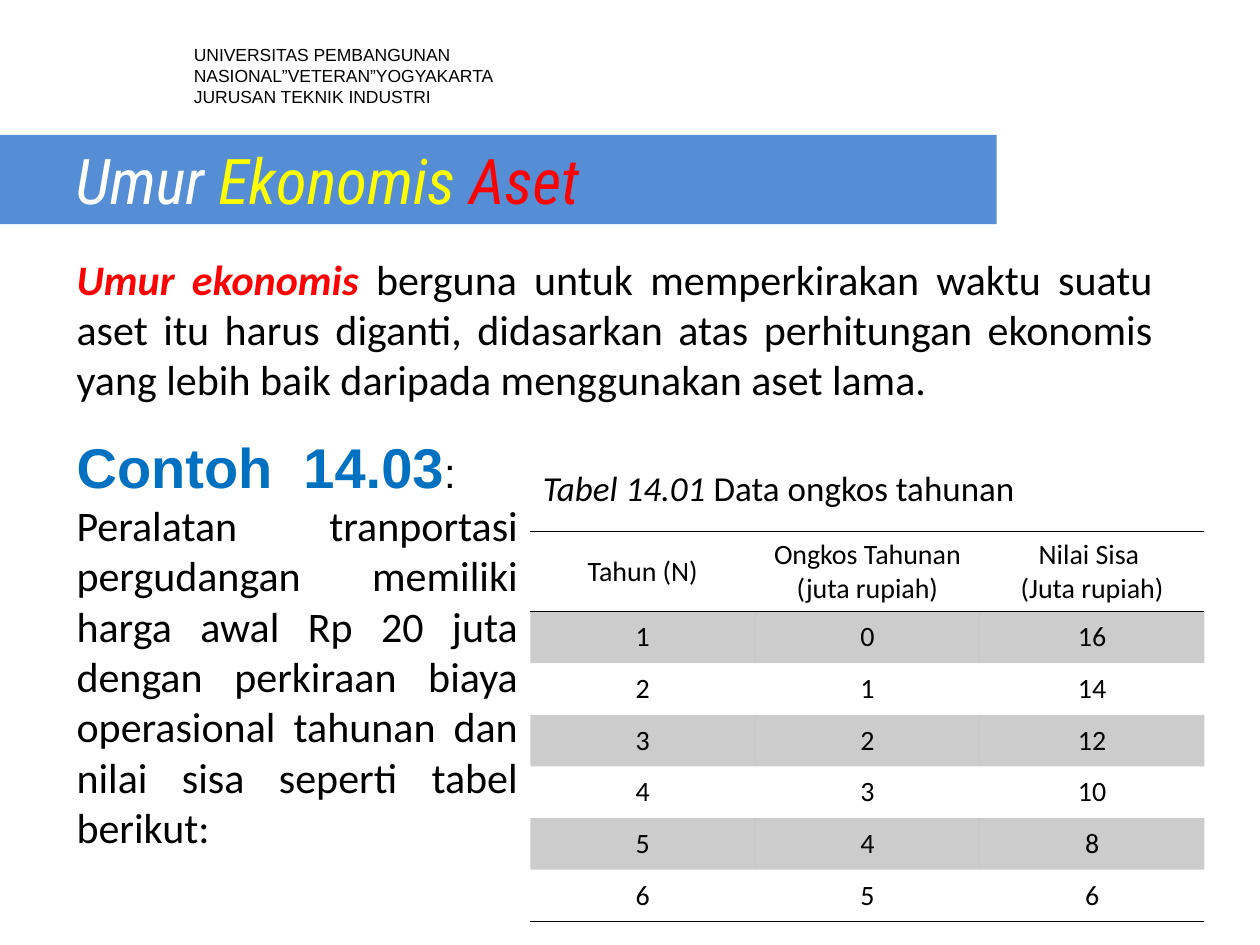
from lxml import etree
from pptx import Presentation
from pptx.dml.color import RGBColor
from pptx.enum.text import MSO_ANCHOR, MSO_AUTO_SIZE, PP_ALIGN
from pptx.oxml.ns import qn
from pptx.util import Inches, Pt

LEFT, CENTER, JUSTIFY = PP_ALIGN.LEFT, PP_ALIGN.CENTER, PP_ALIGN.JUSTIFY
MIDDLE = MSO_ANCHOR.MIDDLE
NO_AUTOFIT = MSO_AUTO_SIZE.NONE
NO_STYLE = "{2D5ABB26-0587-4C30-8999-92F81FD0307C}"
BLACK, RED = "000000", "FF0000"


def color(value):
    return RGBColor.from_string(value)


def add_runs(para, align, *runs):
    """Each run is (text, font, size, colour, bold, italic)."""
    para.alignment = align
    for text, name, size, value, bold, italic in runs:
        run = para.add_run()
        run.text = text
        run.font.name, run.font.size = name, Pt(size)
        run.font.bold, run.font.italic = bold, italic
        run.font.color.rgb = color(value)


deck = Presentation()
deck.slide_width, deck.slide_height = Inches(10), Inches(7.5)
slide = deck.slides.add_slide(deck.slide_layouts[5])

# Title band
title = slide.shapes.title
title.left, title.top = Inches(0), Inches(1.07)
title.width, title.height = Inches(7.91), Inches(0.71)
title.fill.solid()
title.fill.fore_color.rgb = color("558ED5")
frame = title.text_frame
frame.auto_size = NO_AUTOFIT
frame.vertical_anchor = MIDDLE
frame.margin_left = Inches(0.6)
add_runs(frame.paragraphs[0], LEFT,
         *[(word, "Roboto Condensed", 36, value, False, True) for word, value in
           [("Umur ", "FFFFFF"), ("Ekonomis ", "FFFF00"), ("Aset", RED)]])

# Text boxes: place, then paragraphs as (alignment, runs)
boxes = [
    # University header
    ((1.44, 0.3, 3.59, 0.6), [
        (LEFT, [("UNIVERSITAS PEMBANGUNAN NASIONAL”VETERAN”YOGYAKARTA",
                 "Arial", 10, BLACK, False, False)]),
        (LEFT, [("JURUSAN TEKNIK INDUSTRI", "Arial", 10, BLACK, False, False)]),
    ]),
    # Definition
    ((0.51, 1.96, 8.74, 1.31), [
        (JUSTIFY, [
            ("Umur ekonomis ", "Calibri", 24, RED, True, True),
            ("berguna untuk memperkirakan waktu suatu aset itu harus diganti, "
             "didasarkan atas perhitungan ekonomis yang lebih baik daripada "
             "menggunakan aset lama.", "Calibri", 24, BLACK, False, False)]),
    ]),
    # Worked example
    ((0.51, 3.38, 3.7, 1.33), [
        (JUSTIFY, [("Contoh  14.03", "Arial", 32, "0070C0", True, False),
                   (":", "Arial", 24, BLACK, False, False)]),
        (JUSTIFY, [
            ("Peralatan tranportasi pergudangan memiliki harga awal Rp 20 juta "
             "dengan perkiraan biaya operasional tahunan dan nilai sisa seperti "
             "tabel berikut:", "Calibri", 24, BLACK, False, False)]),
    ]),
    # Table caption
    ((4.21, 3.65, 3.97, 0.44), [
        (LEFT, [("Tabel 14.01 ", "Calibri", 20, BLACK, False, True),
                ("Data ongkos tahunan", "Calibri", 20, BLACK, False, False)]),
    ]),
]
for place, paragraphs in boxes:
    box = slide.shapes.add_textbox(*[Inches(length) for length in place])
    frame = box.text_frame
    frame.word_wrap = True
    for index, (align, runs) in enumerate(paragraphs):
        para = frame.add_paragraph() if index else frame.paragraphs[0]
        add_runs(para, align, *runs)

# Annual cost table
rows = [
    ("Tahun (N)", "Ongkos Tahunan\n(juta rupiah)", "Nilai Sisa \n(Juta rupiah)"),
    (1, 0, 16), (2, 1, 14), (3, 2, 12), (4, 3, 10), (5, 4, 8), (6, 5, 6),
]
table = slide.shapes.add_table(len(rows), 3, Inches(4.21), Inches(4.22),
                               Inches(5.35), Inches(3.07)).table
table.first_row = table.horz_banding = False
table._tbl.tblPr.find(qn("a:tableStyleId")).text = NO_STYLE

for row_index, values in enumerate(rows):
    table.rows[row_index].height = Inches(0.41 if row_index else 0.63)
    # Rules above and below the heading, and below the last row
    edges = {0: ("a:lnT", "a:lnB"), len(rows) - 1: ("a:lnB",)}.get(row_index, ())
    for column_index, value in enumerate(values):
        cell = table.cell(row_index, column_index)
        cell.vertical_anchor = MIDDLE
        cell.text_frame.text = str(value)
        for para in cell.text_frame.paragraphs:
            para.alignment = CENTER
            for run in para.runs:
                run.font.name, run.font.size = "Calibri", Pt(16)
                run.font.color.rgb = color(BLACK)
        properties = cell._tc.get_or_add_tcPr()
        for edge in edges:
            line = etree.SubElement(properties, qn(edge), w=str(Pt(1)))
            line_fill = etree.SubElement(line, qn("a:solidFill"))
            etree.SubElement(line_fill, qn("a:srgbClr"), val=BLACK)
        if row_index % 2:
            cell.fill.solid()
            cell.fill.fore_color.rgb = color(BLACK)
            shade = properties.find(qn("a:solidFill")).find(qn("a:srgbClr"))
            etree.SubElement(shade, qn("a:alpha"), val="20000")
        else:
            cell.fill.background()

deck.save("out.pptx")
